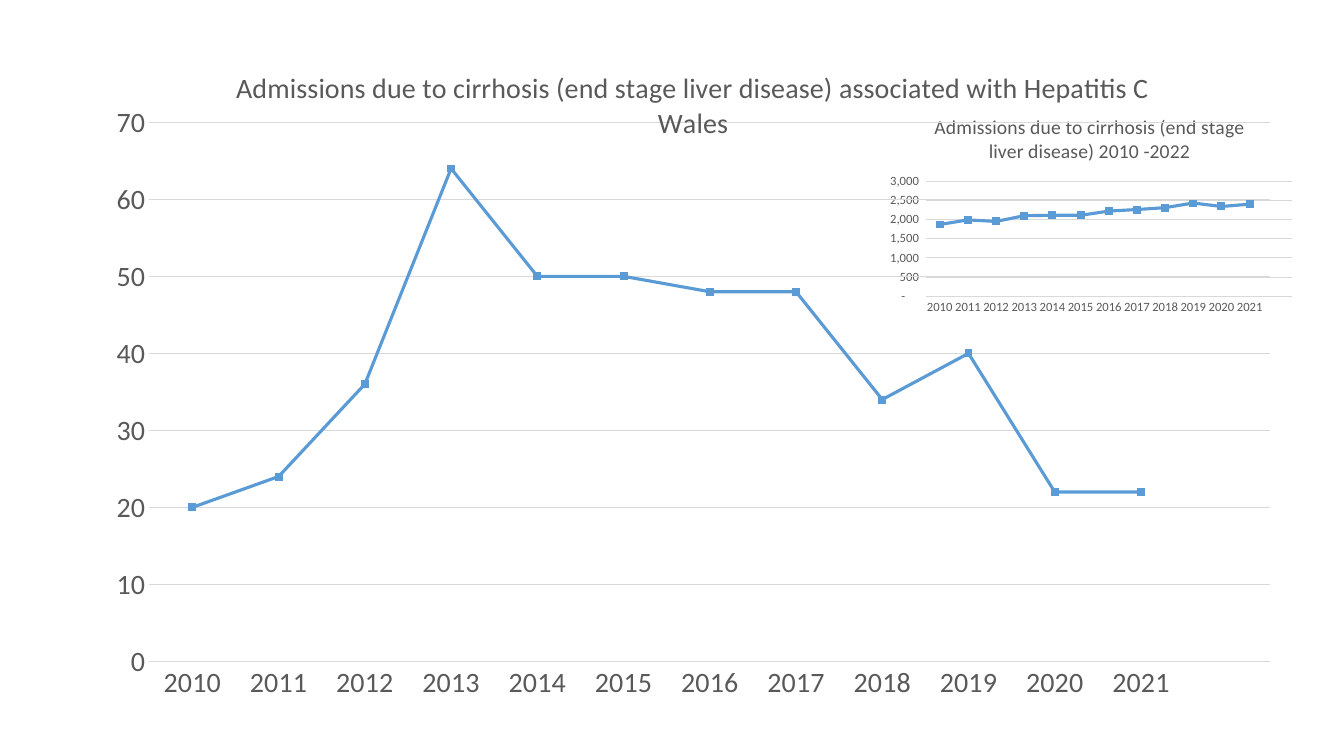
from lxml.etree import SubElement
from pptx import Presentation
from pptx.chart.data import CategoryChartData as ChartData
from pptx.dml.color import RGBColor as RGB
from pptx.enum.chart import XL_CHART_TYPE as ChartType, XL_TICK_MARK as Tick
from pptx.oxml.ns import qn
from pptx.util import Cm, Pt

COLORS = {"text": "595959", "grid": "D9D9D9", "series": "5B9BD5"}
YEARS = [str(year) for year in range(2010, 2022)] + [""]
ALL_TITLE = "Admissions due to cirrhosis (end stage liver disease) 2010 -2022"
HEP_C_TITLE = ("Admissions due to cirrhosis (end stage liver disease) "
               "associated with Hepatitis C Wales")
ALL_ADMISSIONS = [1870, 1990, 1950, 2100, 2110, 2110, 2220, 2260, 2310, 2430, 2340, 2400, None]
HEP_C_ADMISSIONS = [20, 24, 36, 64, 50, 50, 48, 48, 34, 40, 22, 22, None]
ACCOUNTING = '_-* #,##0_-;\\-* #,##0_-;_-* "-"??_-;_-@_-'


class Deck:
    """Holds the style and the current slide, and draws line charts on it."""

    def __init__(self, font="Calibri"):
        self.font = font
        self.prs = Presentation()
        self.prs.slide_width, self.prs.slide_height = Cm(33.87), Cm(19.05)
        self.s = self.prs.slides.add_slide(self.prs.slide_layouts[6])

    def style(self, font, size):
        font.name, font.size, font.bold = self.font, Pt(size), False
        font.color.rgb = RGB.from_string(COLORS["text"])

    def line(self, line, color, width):
        line.color.rgb = RGB.from_string(COLORS[color])
        line.width = Pt(width)

    def axis(self, axis, size):
        axis.major_tick_mark = axis.minor_tick_mark = Tick.NONE
        self.style(axis.tick_labels.font, size)

    def place_plot(self, chart, box):
        area = chart.plots[0]._element.getparent()
        layout = area.find(qn("c:layout"))
        if layout is None:
            layout = SubElement(area, qn("c:layout"))
            area.insert(0, layout)
        manual = SubElement(layout, qn("c:manualLayout"))
        settings = [("layoutTarget", "inner"), ("xMode", "edge"), ("yMode", "edge")]
        for tag, val in settings + list(zip("xywh", box)):
            SubElement(manual, qn(f"c:{tag}")).set("val", str(val))

    def line_chart(self, box, title, name, values, title_size, label_size,
                   number_format="General", plot_box=None):
        data = ChartData(number_format=number_format)
        data.categories = YEARS
        data.add_series(name, values)
        frame = self.s.shapes.add_chart(ChartType.LINE, *map(Cm, box), data)
        chart = frame.chart
        chart.has_legend = False
        chart.font.name, chart.font.size = self.font, Pt(10)

        chart.has_title = True
        p = chart.chart_title.text_frame.paragraphs[0]
        p.text = title
        self.style(p.font, title_size)

        cat, val = chart.category_axis, chart.value_axis
        for axis in (cat, val):
            self.axis(axis, label_size)
        self.line(cat.format.line, "grid", 0.75)
        val.format.line.fill.background()
        self.line(val.major_gridlines.format.line, "grid", 0.75)
        val.tick_labels.number_format = number_format
        val.tick_labels.number_format_is_linked = False

        plot = chart.plots[0]
        plot.vary_by_categories = False
        series = plot.series[0]
        series.smooth = False
        series.marker.style = None
        self.line(series.format.line, "series", 2.25)
        if plot_box:
            self.place_plot(chart, plot_box)


def main():
    deck = Deck()
    deck.line_chart((22.15, 2.51, 10.62, 5.54), ALL_TITLE, ALL_TITLE,
                    ALL_ADMISSIONS, 14, 9, ACCOUNTING)
    deck.line_chart((2.34, 1.12, 30.25, 16.92), HEP_C_TITLE, "Series 1",
                    HEP_C_ADMISSIONS, 20, 20, plot_box=(0.047, 0.116, 0.934, 0.803))
    deck.prs.save("out.pptx")


if __name__ == "__main__":
    main()
